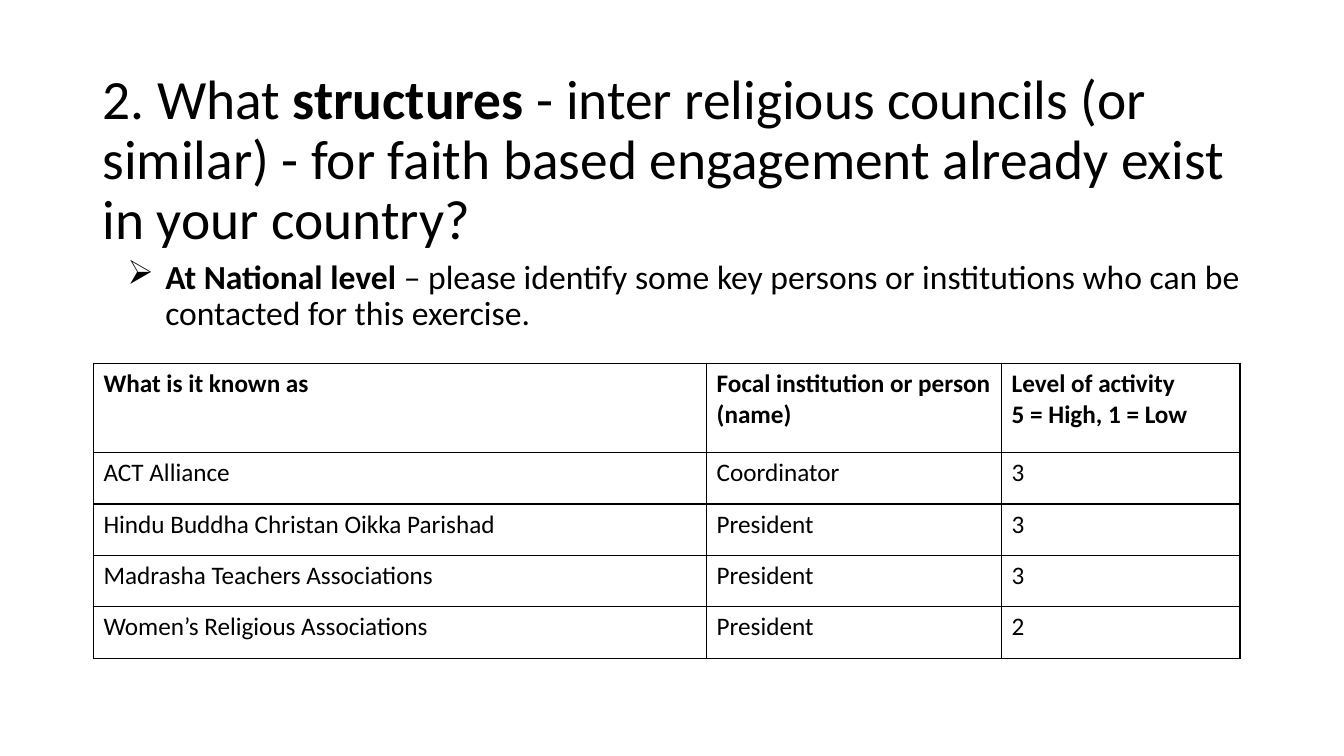
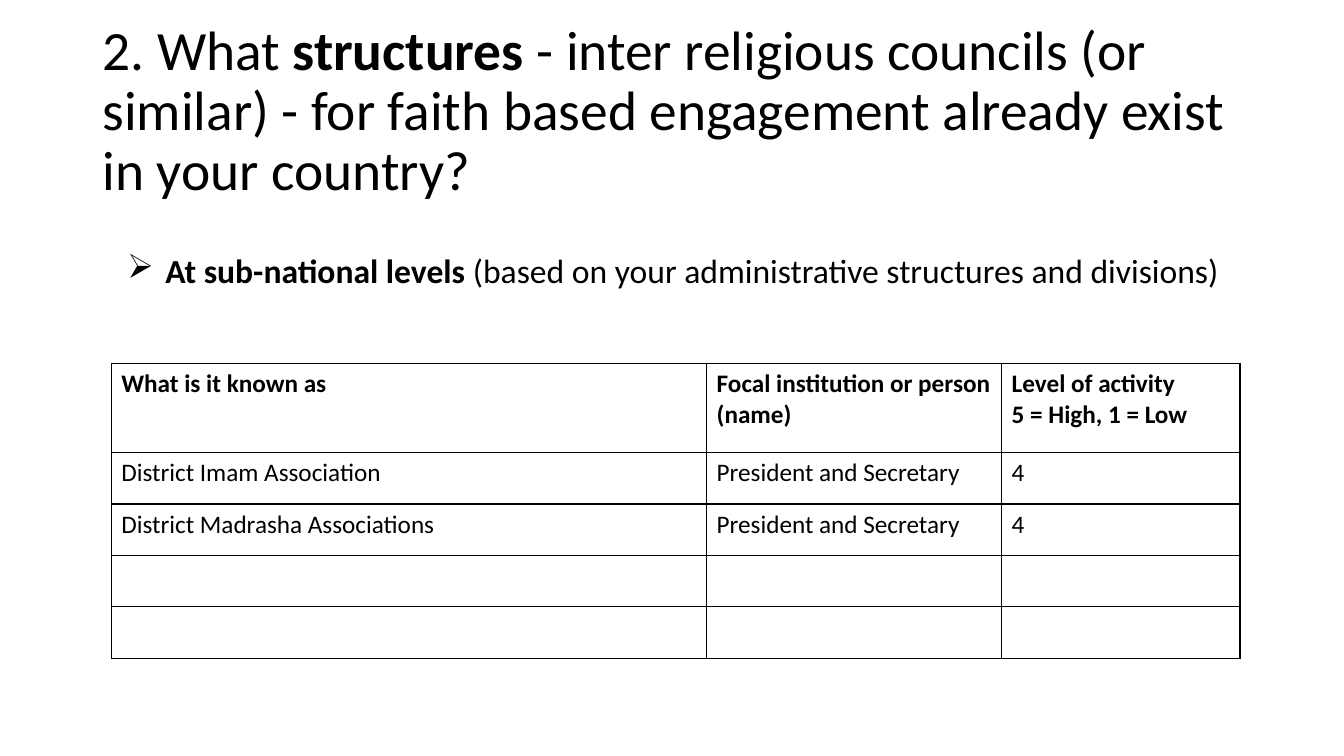
from lxml.etree import SubElement
from pptx import Presentation
from pptx.dml.color import RGBColor
from pptx.enum.text import MSO_ANCHOR as Anchor, MSO_AUTO_SIZE as AutoSize, PP_ALIGN as Align
from pptx.oxml import parse_xml
from pptx.oxml.ns import nsdecls, qn
from pptx.util import Pt

PX = 9525  # EMU in one px, 96 px to the inch
BLACK = RGBColor(0x00, 0x00, 0x00)
FONT = "Calibri"

# Shared layout, in px
TEXT_LEFT, TEXT_WIDTH = 88, 1104
TITLE_HEIGHT = 139
BULLET_INDENT, BULLET_HANGING = 60, 36
TABLE_TOP, TABLE_RIGHT = 346, 1181
HEADER_HEIGHT, ROW_HEIGHT, BODY_ROWS = 85, 49, 4
PERSON_WIDTH, LEVEL_WIDTH = 281, 227

TITLE = [
    ("2. What ", False),
    ("structures", True),
    (" - inter religious councils (or similar) - for faith based engagement "
     "already exist in your country?", False),
]
HEADER = ("What is it known as", "Focal institution or person (name)",
          "Level of activity\n5 = High, 1 = Low")

SLIDES = [
    {
        "title_top": 84, "prompt_top": 243, "prompt_height": 83, "table_left": 89,
        "prompt": [
            ("At National level", True),
            (" – please identify some key persons or institutions who can be "
             "contacted for this exercise.", False),
        ],
        "rows": [
            ("ACT Alliance", "Coordinator", "3"),
            ("Hindu Buddha Christan Oikka Parishad", "President", "3"),
            ("Madrasha Teachers Associations", "President", "3"),
            ("Women’s Religious Associations", "President", "2"),
        ],
    },
    {
        "title_top": 38, "prompt_top": 238, "prompt_height": 59, "table_left": 106,
        "prompt": [
            ("At sub-national levels", True),
            (" (based on your administrative structures and divisions)", False),
        ],
        "rows": [
            ("District Imam Association", "President and Secretary", "4"),
            ("District Madrasha Associations", "President and Secretary", "4"),
        ],
    },
]


def add_spans(para, spans, size):
    """Add (text, bold) spans to a paragraph in the shared font."""
    for text, bold in spans:
        span = para.add_run()
        span.text = text
        span.font.name, span.font.size, span.font.bold = FONT, Pt(size), bold
        span.font.color.rgb = BLACK


def outline_cell(cell):
    """Clear the cell's fill and draw a 1 pt line on all four sides."""
    cell.fill.background()
    props = cell._tc.get_or_add_tcPr()
    for index, side in enumerate(("lnL", "lnR", "lnT", "lnB")):
        props.insert(index, parse_xml(
            f'<a:{side} {nsdecls("a")} w="{Pt(1)}"><a:solidFill>'
            f'<a:srgbClr val="{BLACK}"/></a:solidFill></a:{side}>'))


deck = Presentation()
deck.slide_width, deck.slide_height = 1280 * PX, 720 * PX
title_only = deck.slide_layouts[5]

for content in SLIDES:
    page = deck.slides.add_slide(title_only)

    # Title
    title = page.shapes.title
    title.left, title.top = TEXT_LEFT * PX, content["title_top"] * PX
    title.width, title.height = TEXT_WIDTH * PX, TITLE_HEIGHT * PX
    frame = title.text_frame
    frame.word_wrap, frame.auto_size = True, AutoSize.NONE
    frame.vertical_anchor = Anchor.MIDDLE
    para = frame.paragraphs[0]
    para.alignment, para.line_spacing = Align.LEFT, 0.9
    add_spans(para, TITLE, 39.6)

    # Bulleted prompt
    box = page.shapes.add_textbox(TEXT_LEFT * PX, content["prompt_top"] * PX,
                                  TEXT_WIDTH * PX, content["prompt_height"] * PX)
    box.text_frame.word_wrap = True
    para = box.text_frame.paragraphs[0]
    para.line_spacing, para.space_before = 0.9, Pt(5)
    props = para._p.get_or_add_pPr()
    props.set("marL", str(BULLET_INDENT * PX))
    props.set("indent", str(-BULLET_HANGING * PX))
    SubElement(props, qn("a:buChar")).set("char", "➢")
    add_spans(para, content["prompt"], 24)

    # Table: the last two columns line up on both slides
    left = content["table_left"]
    name_width = TABLE_RIGHT - left - PERSON_WIDTH - LEVEL_WIDTH
    table = page.shapes.add_table(
        1 + BODY_ROWS, len(HEADER), left * PX, TABLE_TOP * PX, (TABLE_RIGHT - left) * PX,
        (HEADER_HEIGHT + BODY_ROWS * ROW_HEIGHT) * PX).table
    table.first_row = table.horz_banding = False
    for column, width in zip(table.columns, (name_width, PERSON_WIDTH, LEVEL_WIDTH)):
        column.width = width * PX
    for index, row in enumerate(table.rows):
        row.height = (ROW_HEIGHT if index else HEADER_HEIGHT) * PX
    for cell in table.iter_cells():
        outline_cell(cell)

    for row_index, texts in enumerate([HEADER] + content["rows"]):
        for column_index, text in enumerate(texts):
            frame = table.cell(row_index, column_index).text_frame
            for line_index, line in enumerate(text.split("\n")):
                para = frame.add_paragraph() if line_index else frame.paragraphs[0]
                add_spans(para, [(line, row_index == 0)], 18)

deck.save("out.pptx")
